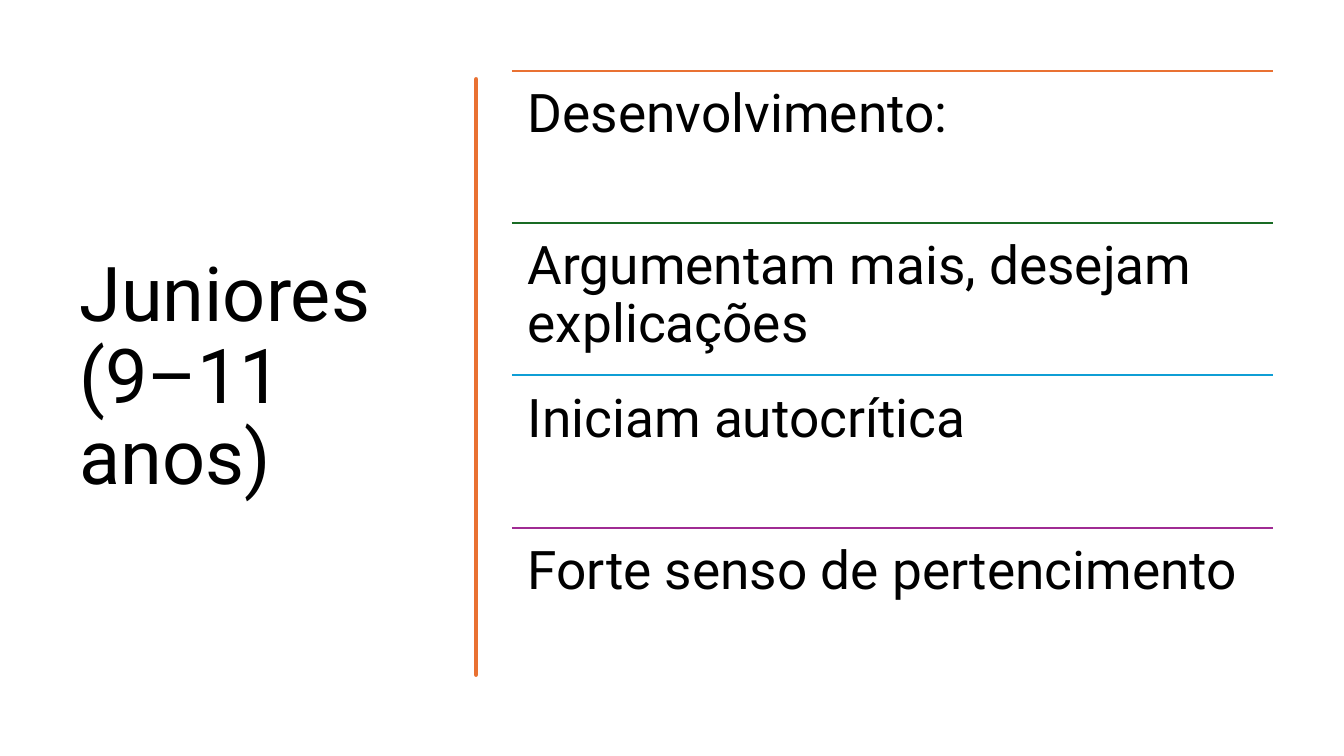
from dataclasses import dataclass

from lxml import etree
from pptx import Presentation
from pptx.dml.color import RGBColor
from pptx.enum.shapes import MSO_CONNECTOR
from pptx.enum.text import MSO_ANCHOR, MSO_AUTO_SIZE, PP_ALIGN
from pptx.oxml.ns import qn
from pptx.slide import Slide
from pptx.text.text import TextFrame
from pptx.util import Cm, Pt

FONT = "Roboto"
BLACK, ORANGE = "000000", "E97132"

# Rows on the right, in cm
ROW_LEFT, ROW_TOP = 12.9, 1.78
ROW_WIDTH, ROW_HEIGHT = 19.18, 3.84
ROW_INSET = Cm(0.4)

# Brush stroke between title and rows, in cm
STROKE_TOP, STROKE_BOTTOM = 2.13, 17.17
STROKE_LEFT, STROKE_RIGHT = 12.01, 12.06
CURVE_STEPS = 8


@dataclass(frozen=True)
class Row:
    text: str
    color: str


@dataclass(frozen=True)
class Curve:
    """One wave of a stroke edge: sideways bulges at two heights, then its end."""
    first_bulge: float
    first_y: float
    second_bulge: float
    second_y: float
    end_y: float


ROWS = [
    Row("Desenvolvimento:", ORANGE),
    Row("Argumentam mais, desejam explicações", "196B24"),
    Row("Iniciam autocrítica", "0F9ED5"),
    Row("Forte senso de pertencimento", "A02B93"),
]

RIGHT_EDGE = [
    Curve(0.06, 2.59, 0.06, 3.02, 3.71),
    Curve(-0.05, 4.39, 0.03, 4.95, 5.74),
    Curve(-0.02, 6.53, 0, 6.65, 7.47),
    Curve(-0.02, 8.26, 0.06, 8.69, 9.04),
    Curve(-0.05, 9.4, 0.11, 10.52, 11.07),
    Curve(-0.1, 11.61, -0.07, 12.29, 12.95),
    Curve(0.06, 13.61, 0.06, 14.33, 14.83),
    Curve(-0.05, 15.32, 0.03, 16.51, STROKE_BOTTOM),
]
LEFT_EDGE = [
    Curve(0.03, 16.41, -0.05, 16.36, 15.57),
    Curve(0.03, 14.81, 0.03, 14.48, 14.15),
    Curve(0.03, 13.82, 0, 12.57, 12.12),
    Curve(0, 11.66, -0.05, 11.3, 10.54),
    Curve(0.03, 9.8, -0.02, 9.47, 8.51),
    Curve(0.03, 7.57, -0.02, 7.14, 6.35),
    Curve(0.03, 5.54, 0.05, 5.08, 4.6),
    Curve(-0.07, 4.14, 0.08, 2.64, STROKE_TOP),
]


def rgb(color: str) -> RGBColor:
    return RGBColor.from_string(color)


def apply_format(target: object, values: dict) -> None:
    for name, value in values.items():
        setattr(target, name, value)


def write_text(frame: TextFrame, text: str, size: float, frame_format: dict) -> None:
    frame.text = text
    apply_format(frame, {"word_wrap": True, "auto_size": MSO_AUTO_SIZE.NONE, **frame_format})
    paragraph = frame.paragraphs[0]
    apply_format(paragraph, {"alignment": PP_ALIGN.LEFT, "line_spacing": 0.9})
    font = paragraph.runs[0].font
    apply_format(font, {"name": FONT, "size": Pt(size)})
    font.color.rgb = rgb(BLACK)


def edge_points(x: float, start_y: float, curves: list[Curve]) -> list[tuple[float, float]]:
    """Sample the cubic curves of one stroke edge."""
    points = [(x, start_y)]
    for curve in curves:
        for step in range(1, CURVE_STEPS + 1):
            t = step / CURVE_STEPS
            u = 1 - t
            first, second = 3 * u * u * t, 3 * u * t * t
            points.append((
                x + first * curve.first_bulge + second * curve.second_bulge,
                u ** 3 * start_y + first * curve.first_y
                + second * curve.second_y + t ** 3 * curve.end_y,
            ))
        start_y = curve.end_y
    return points


def draw_title(slide: Slide) -> None:
    title = slide.shapes.title
    apply_format(title, {"left": Cm(1.75), "top": Cm(1.78),
                         "width": Cm(9.5), "height": Cm(15.52)})
    write_text(title.text_frame, "Juniores (9–11 anos)", 54,
               {"vertical_anchor": MSO_ANCHOR.MIDDLE})


def draw_stroke(slide: Slide) -> None:
    start, *others = (edge_points(STROKE_RIGHT, STROKE_TOP, RIGHT_EDGE)
                      + edge_points(STROKE_LEFT, STROKE_BOTTOM, LEFT_EDGE))
    builder = slide.shapes.build_freeform(*start, scale=Cm(1))
    builder.add_line_segments(others, close=True)
    stroke = builder.convert_to_shape()
    stroke.shadow.inherit = False
    stroke.fill.solid()
    stroke.fill.fore_color.rgb = rgb(ORANGE)
    stroke.line.color.rgb = rgb(ORANGE)
    stroke.line.width = Pt(3.25)


def draw_row(slide: Slide, row: Row, top: float) -> None:
    rule = slide.shapes.add_connector(MSO_CONNECTOR.STRAIGHT, Cm(ROW_LEFT), Cm(top),
                                      Cm(ROW_LEFT + ROW_WIDTH), Cm(top))
    rule.line.color.rgb = rgb(row.color)
    rule.line.width = Pt(1.5)
    etree.SubElement(rule._element.spPr, qn("a:effectLst"))

    box = slide.shapes.add_textbox(Cm(ROW_LEFT), Cm(top), Cm(ROW_WIDTH), Cm(ROW_HEIGHT))
    margins = {f"margin_{side}": ROW_INSET for side in ("left", "top", "right", "bottom")}
    write_text(box.text_frame, row.text, 38, {"vertical_anchor": MSO_ANCHOR.TOP, **margins})


def main() -> None:
    presentation = Presentation()
    apply_format(presentation, {"slide_width": Cm(33.87), "slide_height": Cm(19.05)})
    slide = presentation.slides.add_slide(presentation.slide_layouts.get_by_name("Title Only"))

    draw_title(slide)
    draw_stroke(slide)
    for index, row in enumerate(ROWS):
        draw_row(slide, row, ROW_TOP + index * ROW_HEIGHT)

    presentation.save("out.pptx")


if __name__ == "__main__":
    main()
